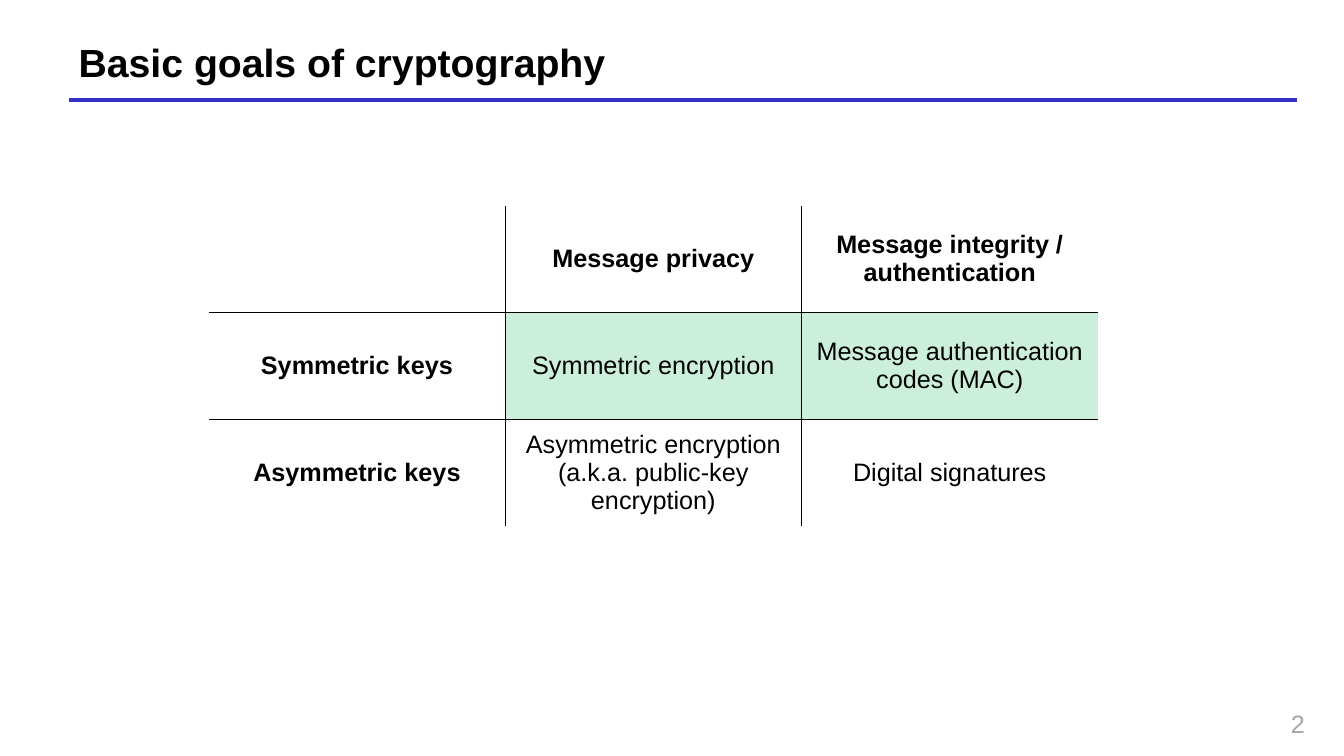
from dataclasses import dataclass

from lxml.etree import SubElement
from pptx import Presentation
from pptx.dml.color import RGBColor
from pptx.enum.shapes import MSO_CONNECTOR
from pptx.enum.text import MSO_ANCHOR, PP_ALIGN
from pptx.oxml import parse_xml
from pptx.oxml.ns import nsdecls, qn
from pptx.util import Inches, Pt


@dataclass(frozen=True)
class Theme:
    """Colours and type sizes of the slide."""
    font: str = "Arial"
    ink: str = "000000"
    rule: str = "3333CC"
    muted: str = "A6A6A6"
    mark: str = "00B050"
    alpha: int = 20
    title: int = 28
    body: int = 18


class Page:
    """Draws styled elements on one slide."""

    def __init__(self, slide, theme):
        self.slide, self.theme = slide, theme

    def label(self, frame, text, size, color, align, bold=False):
        """Put one styled paragraph in a text frame."""
        frame.word_wrap = True
        para = frame.paragraphs[0]
        para.text, para.alignment = text, align
        font = para.font
        font.name, font.size, font.bold = self.theme.font, Pt(size), bold
        font.color.rgb = RGBColor.from_string(color)

    def title(self, text, left, top, width, height):
        """Place and fill the title placeholder."""
        shape = self.slide.shapes.title
        shape.left, shape.top = Inches(left), Inches(top)
        shape.width, shape.height = Inches(width), Inches(height)
        shape.text_frame.vertical_anchor = MSO_ANCHOR.MIDDLE
        self.label(shape.text_frame, text, self.theme.title, self.theme.ink,
                   PP_ALIGN.LEFT, True)

    def rule(self, left, top, width):
        """Draw a horizontal rule."""
        line = self.slide.shapes.add_connector(
            MSO_CONNECTOR.STRAIGHT, Inches(left), Inches(top),
            Inches(left + width), Inches(top))
        line.line.color.rgb = RGBColor.from_string(self.theme.rule)
        line.line.width = Pt(3)
        SubElement(line._element.spPr, qn("a:effectLst"))

    def number(self, text, left, top, width, height):
        """Add the slide number."""
        box = self.slide.shapes.add_textbox(
            Inches(left), Inches(top), Inches(width), Inches(height))
        self.label(box.text_frame, text, self.theme.body, self.theme.muted,
                   PP_ALIGN.RIGHT)

    def shade(self, cell, marked):
        """Tint a marked cell and clear any other."""
        if not marked:
            cell.fill.background()
            return
        cell.fill.solid()
        cell.fill.fore_color.rgb = RGBColor.from_string(self.theme.mark)
        color = cell._tc.tcPr.find(".//" + qn("a:srgbClr"))
        SubElement(color, qn("a:alpha"), val=str(self.theme.alpha * 1000))

    def border(self, cell, sides):
        """Line the inner sides of a cell and leave the others open."""
        solid = f'<a:solidFill><a:srgbClr val="{self.theme.ink}"/></a:solidFill>'
        for spot, (side, inner) in enumerate(sides.items()):
            fill = solid if inner else "<a:noFill/>"
            line = f'<a:ln{side} {nsdecls("a")} w="{Pt(1)}">{fill}</a:ln{side}>'
            cell._tc.get_or_add_tcPr().insert(spot, parse_xml(line))

    def grid(self, rows, left, top, wide, high, marks):
        """Build a table with equal cells and inner lines only."""
        count, span = len(rows), len(rows[0])
        table = self.slide.shapes.add_table(
            count, span, Inches(left), Inches(top),
            Inches(wide * span), Inches(high * count)).table
        table.horz_banding = table.first_row = False
        for r, row in enumerate(rows):
            for c, text in enumerate(row):
                cell = table.cell(r, c)
                cell.vertical_anchor = MSO_ANCHOR.MIDDLE
                self.label(cell.text_frame, text, self.theme.body,
                           self.theme.ink, PP_ALIGN.CENTER, r == 0 or c == 0)
                self.shade(cell, (r, c) in marks)
                self.border(cell, {"L": c > 0, "R": c < span - 1,
                                   "T": r > 0, "B": r < count - 1})


def main():
    """Build and save the slide."""
    deck = Presentation()
    deck.slide_width, deck.slide_height = Inches(13.33), Inches(7.5)
    page = Page(deck.slides.add_slide(deck.slide_layouts[5]), Theme())
    page.rule(0.68, 0.99, 12.18)
    page.title("Basic goals of cryptography", 0.68, 0.36, 12.18, 0.5)
    page.number("2", 12.35, 6.98, 0.69, 0.36)
    goals = [
        ["", "Message privacy", "Message integrity / authentication"],
        ["Symmetric keys", "Symmetric encryption",
         "Message authentication codes (MAC)"],
        ["Asymmetric keys",
         "Asymmetric encryption (a.k.a. public-key encryption)",
         "Digital signatures"],
    ]
    page.grid(goals, 2.07, 2.04, 2.94, 1.06, {(1, 1), (1, 2)})
    deck.save("out.pptx")


if __name__ == "__main__":
    main()
